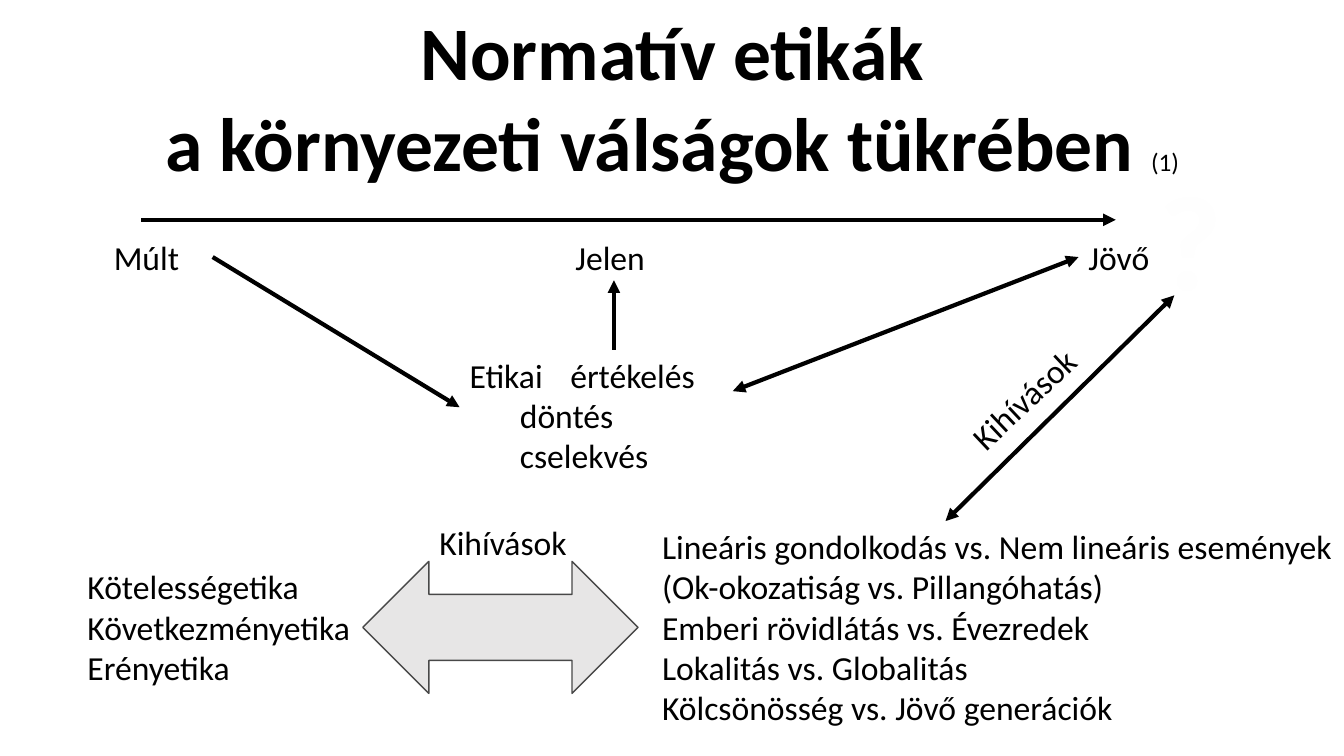
"""Build the slide on normative ethics and environmental crises."""
from dataclasses import dataclass

from lxml import etree
from pptx import Presentation
from pptx.dml.color import RGBColor
from pptx.enum.shapes import MSO_CONNECTOR, MSO_SHAPE
from pptx.enum.text import MSO_AUTO_SIZE, PP_ALIGN
from pptx.oxml.ns import qn
from pptx.util import Pt

STRAIGHT = MSO_CONNECTOR.STRAIGHT
DOUBLE_ARROW = MSO_SHAPE.LEFT_RIGHT_ARROW
FIT_SHAPE = MSO_AUTO_SIZE.SHAPE_TO_FIT_TEXT
LEFT, CENTER = PP_ALIGN.LEFT, PP_ALIGN.CENTER
FONT = "Calibri"
BLACK = "000000"


@dataclass
class Label:
    left: float
    top: float
    width: float
    height: float
    lines: list[str]
    wrap: bool = False
    rotation: float = 0
    size: float = 24
    color: str = BLACK
    bold: bool = False
    align: PP_ALIGN = LEFT


@dataclass
class Arrow:
    x1: float
    y1: float
    x2: float
    y2: float
    both_ends: bool = False


LABELS = [
    Label(74.2, 165.6, 103, 36, ["Múlt"], wrap=True),
    Label(403.9, 165.6, 154.8, 36, ["Jelen"], wrap=True),
    Label(770.4, 165.6, 89.3, 36, ["Jövő"], wrap=True),
    Label(328.3, 249.8, 208.8, 116.6,
          ["Etikai\tértékelés", "\tdöntés", "\tcselekvés"], wrap=True),
    Label(465.8, 372.2, 497.5, 152.6, [
        "Lineáris gondolkodás vs. Nem lineáris események",
        "(Ok-okozatiság vs. Pillangóhatás)",
        "Emberi rövidlátás vs. Évezredek",
        "Lokalitás vs. Globalitás",
        "Kölcsönösség vs. Jövő generációk",
    ]),
    Label(678.2, 266.4, 106.6, 36, ["Kihívások"], rotation=316.7),
    Label(55.4, 401, 203.8, 94.3,
          ["Kötelességetika", "Következményetika", "Erényetika"]),
    Label(306.7, 369.4, 106.6, 36, ["Kihívások"]),
]
TITLE = Label(107.3, 0, 745.9, 138.2,
              ["Normatív etikák", "a környezeti válságok tükrében "],
              size=54, bold=True, align=CENTER)
QUESTION = Label(815, 108, 70.6, 123.8, ["?"], wrap=True, size=96,
                 color="FEFEFE", bold=True, align=CENTER)

ARROWS = [
    Arrow(151.9, 183.6, 328.3, 290.9),
    Arrow(523.4, 279.4, 770.4, 183.6, both_ends=True),
    Arrow(100.8, 157, 797, 157),
    Arrow(438.5, 249.8, 438.5, 200.2),
    Arrow(675.4, 372.2, 838.8, 211, both_ends=True),
]


def rgb(value: str) -> RGBColor:
    return RGBColor.from_string(value)


def add_run(p, text: str, *, size: float = 24, color: str = BLACK,
            bold: bool = False):
    r = p.add_run()
    r.text = text
    r.font.name = FONT
    r.font.size = Pt(size)
    r.font.bold = bold
    r.font.color.rgb = rgb(color)
    return r


def add_label(s, label: Label):
    sp = s.shapes.add_textbox(Pt(label.left), Pt(label.top),
                              Pt(label.width), Pt(label.height))
    sp.rotation = label.rotation
    tf = sp.text_frame
    tf.word_wrap = label.wrap
    tf.auto_size = FIT_SHAPE
    for i, line in enumerate(label.lines):
        p = tf.add_paragraph() if i else tf.paragraphs[0]
        p.alignment = label.align
        add_run(p, line, size=label.size, color=label.color, bold=label.bold)
    return tf


def add_arrow(s, arrow: Arrow) -> None:
    sp = s.shapes.add_connector(STRAIGHT, Pt(arrow.x1), Pt(arrow.y1),
                                Pt(arrow.x2), Pt(arrow.y2))
    sp.line.color.rgb = rgb(BLACK)
    sp.line.width = Pt(3)
    ln = sp.line._get_or_add_ln()
    for end in ("a:headEnd", "a:tailEnd") if arrow.both_ends else ("a:tailEnd",):
        etree.SubElement(ln, qn(end), type="triangle")
    etree.SubElement(sp._element.spPr, qn("a:effectLst"))


def outline_text(r, color: str, width: float) -> None:
    rpr = r.font._element
    rpr.set("spc", "50")
    ln = etree.Element(qn("a:ln"), w=str(Pt(width)))
    fill = etree.SubElement(ln, qn("a:solidFill"))
    etree.SubElement(fill, qn("a:srgbClr"), val=color)
    rpr.insert(0, ln)


def add_challenge_arrow(s) -> None:
    sp = s.shapes.add_shape(DOUBLE_ARROW, Pt(259.2), Pt(401), Pt(196.6), Pt(94.3))
    sp.shadow.inherit = False
    sp.fill.solid()
    sp.fill.fore_color.rgb = rgb("E7E6E6")
    sp.line.color.rgb = rgb("484848")
    sp.line.width = Pt(1)


def main() -> None:
    prs = Presentation()
    prs.slide_width, prs.slide_height = Pt(960), Pt(540)
    s = prs.slides.add_slide(prs.slide_layouts[6])
    title = add_label(s, TITLE)
    add_run(title.paragraphs[-1], "(1)", size=18)
    question = add_label(s, QUESTION)
    outline_text(question.paragraphs[0].runs[0], "4472C4", 0.75)
    add_challenge_arrow(s)
    for label in LABELS:
        add_label(s, label)
    for arrow in ARROWS:
        add_arrow(s, arrow)
    prs.save("out.pptx")


if __name__ == "__main__":
    main()
